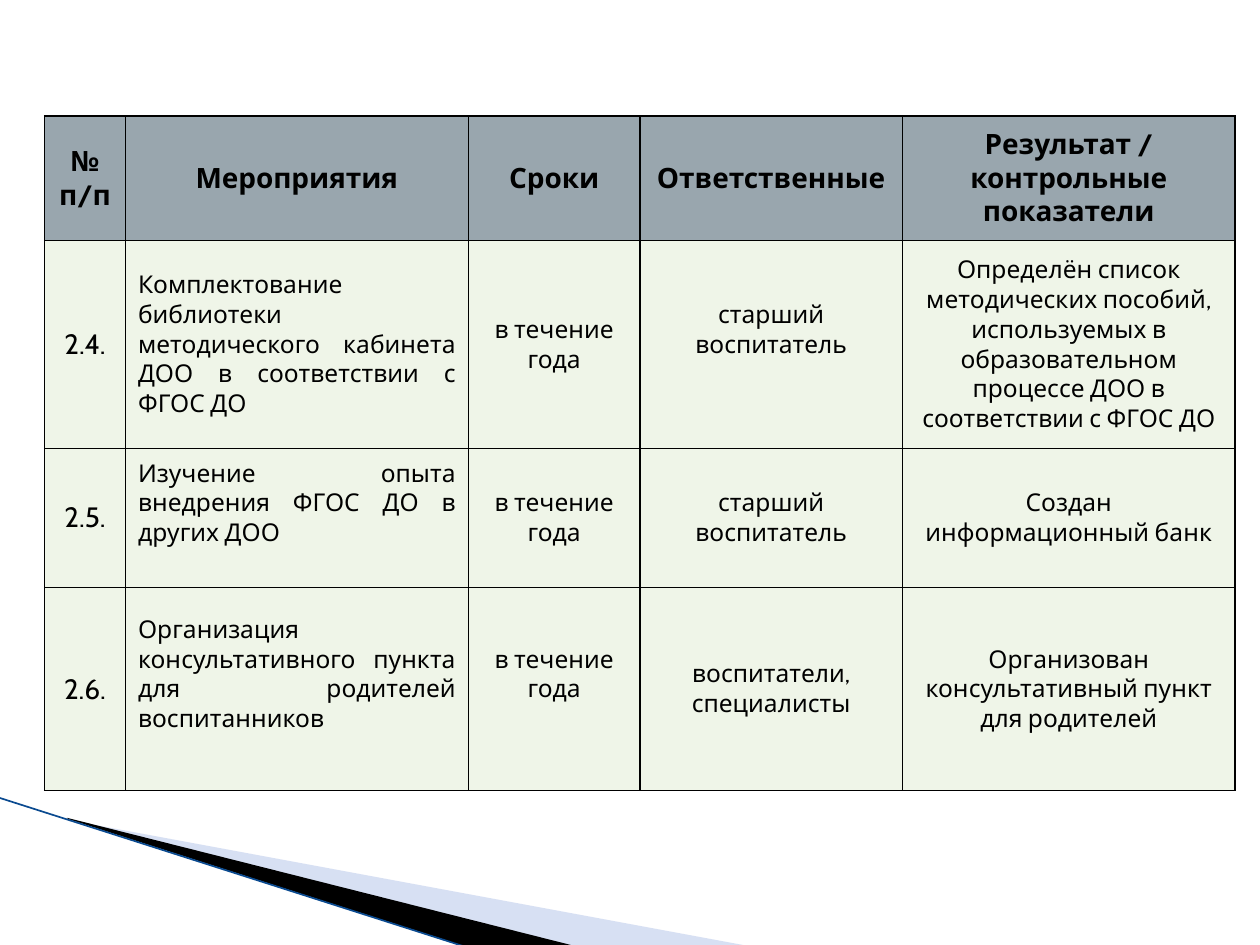
"""Build a plan table slide with a layered wedge in the lower left corner."""
from lxml import etree
from pptx import Presentation
from pptx.dml.color import RGBColor
from pptx.enum.shapes import MSO_CONNECTOR
from pptx.enum.text import MSO_ANCHOR, PP_ALIGN
from pptx.oxml import parse_xml
from pptx.oxml.ns import nsdecls, qn
from pptx.util import Pt

CENTER, JUSTIFY = PP_ALIGN.CENTER, PP_ALIGN.JUSTIFY
MIDDLE = MSO_ANCHOR.MIDDLE
STRAIGHT = MSO_CONNECTOR.STRAIGHT

THEME = {
    "font": "Cabin", "large": 16, "body": 14,
    "text": "000000", "header": "99A6AE", "cell": "EFF5E8", "border": "000000",
    "pale": "9DB2E1", "dark": "000000", "edge": "0A4A90",
}

HEADERS = ["№ п/п", "Мероприятия", "Сроки", "Ответственные",
           "Результат /\nконтрольные показатели"]
ACTIVITIES = [
    ["2.4.",
     "Комплектование библиотеки методического кабинета ДОО в соответствии с ФГОС ДО",
     "в течение года", "старший воспитатель",
     "Определён список методических пособий, используемых в образовательном "
     "процессе ДОО в соответствии с ФГОС ДО"],
    ["2.5.", "Изучение опыта внедрения ФГОС ДО в других ДОО",
     "в течение года", "старший воспитатель", "Создан информационный банк"],
    ["2.6.", "Организация консультативного пункта для родителей воспитанников",
     "в течение года", "воспитатели, специалисты",
     "Организован консультативный пункт для родителей"],
]
RAISED_CELLS = {(1, 3), (2, 1), (3, 1), (3, 2)}
RAISED_MARGIN = 20.6

TABLE_LEFT, TABLE_TOP = 25.5, 66.2
COLUMN_WIDTHS = [46.2, 196, 98, 150, 190.2]
ROW_HEIGHTS = [71.2, 118.8, 79.6, 116]

WEDGES = [
    ((56.2, 393.8, 299.5, 113.8),
     [(39.6, 468.7), (428.4, 540.7), (328.3, 540.7), (39.6, 468)], "pale", 40),
    ((-4.3, 455.8, 299.5, 66.2),
     [(38.2, 467.3), (329, 540.7), (267.8, 541.4), (38.9, 468)], "dark", 100),
]
EDGE = (-0.7, 455.8, 267.1, 541.4)


def color(key):
    return RGBColor.from_string(THEME[key])


def set_frame(wedge, frame):
    """Move the frame while the outline stays in place."""
    left, top, width, height = map(Pt, frame)
    shift_x, shift_y = wedge.left - left, wedge.top - top
    outline = next(wedge._element.iter(qn("a:path")))
    outline.set("w", str(width))
    outline.set("h", str(height))
    for point in outline.iter(qn("a:pt")):
        point.set("x", str(int(point.get("x")) + shift_x))
        point.set("y", str(int(point.get("y")) + shift_y))
    wedge.left, wedge.top, wedge.width, wedge.height = left, top, width, height


def add_wedge(slide, frame, points, fill, opacity):
    corners = [(Pt(x), Pt(y)) for x, y in points]
    builder = slide.shapes.build_freeform(*corners[0])
    builder.add_line_segments(corners[1:])
    wedge = builder.convert_to_shape()
    set_frame(wedge, frame)
    wedge.shadow.inherit = False
    wedge.line.fill.background()
    wedge.fill.solid()
    wedge.fill.fore_color.rgb = color(fill)
    if opacity < 100:
        tint = wedge.fill._xPr.find(qn("a:solidFill"))[0]
        etree.SubElement(tint, qn("a:alpha"), val=str(opacity * 1000))


def add_edge(slide):
    edge = slide.shapes.add_connector(STRAIGHT, *map(Pt, EDGE))
    edge.line.color.rgb = color("edge")
    edge.line.width = Pt(0.95)
    etree.SubElement(edge._element.spPr, qn("a:effectLst"))


def add_borders(cell):
    properties = cell._tc.get_or_add_tcPr()
    for side in "LRTB":
        properties.append(parse_xml(
            f'<a:ln{side} {nsdecls("a")} w="{Pt(1)}"><a:solidFill>'
            f'<a:srgbClr val="{THEME["border"]}"/></a:solidFill></a:ln{side}>'))


def fill_cell(cell, text, row, column):
    header = row == 0
    add_borders(cell)
    cell.fill.solid()
    cell.fill.fore_color.rgb = color("header" if header else "cell")
    cell.vertical_anchor = MIDDLE
    if (row, column) in RAISED_CELLS:
        cell.margin_bottom = Pt(RAISED_MARGIN)
    frame = cell.text_frame
    for index, line in enumerate(text.split("\n")):
        paragraph = frame.add_paragraph() if index else frame.paragraphs[0]
        paragraph.alignment = JUSTIFY if column == 1 and not header else CENTER
        run = paragraph.add_run()
        run.text = line
        run.font.name = THEME["font"]
        run.font.size = Pt(THEME["large" if header or column == 0 else "body"])
        run.font.bold = header
        run.font.color.rgb = color("text")


def add_plan(slide):
    rows = [HEADERS] + ACTIVITIES
    plan = slide.shapes.add_table(
        len(rows), len(HEADERS), Pt(TABLE_LEFT), Pt(TABLE_TOP),
        Pt(sum(COLUMN_WIDTHS)), Pt(sum(ROW_HEIGHTS))).table
    for column, width in zip(plan.columns, COLUMN_WIDTHS):
        column.width = Pt(width)
    for row, height in zip(plan.rows, ROW_HEIGHTS):
        row.height = Pt(height)
    for r, texts in enumerate(rows):
        for c, text in enumerate(texts):
            fill_cell(plan.cell(r, c), text, r, c)


def main():
    deck = Presentation()
    deck.slide_width, deck.slide_height = Pt(720), Pt(540)
    slide = deck.slides.add_slide(deck.slide_layouts[6])
    for wedge in WEDGES:
        add_wedge(slide, *wedge)
    add_edge(slide)
    add_plan(slide)
    deck.save("out.pptx")


if __name__ == "__main__":
    main()
